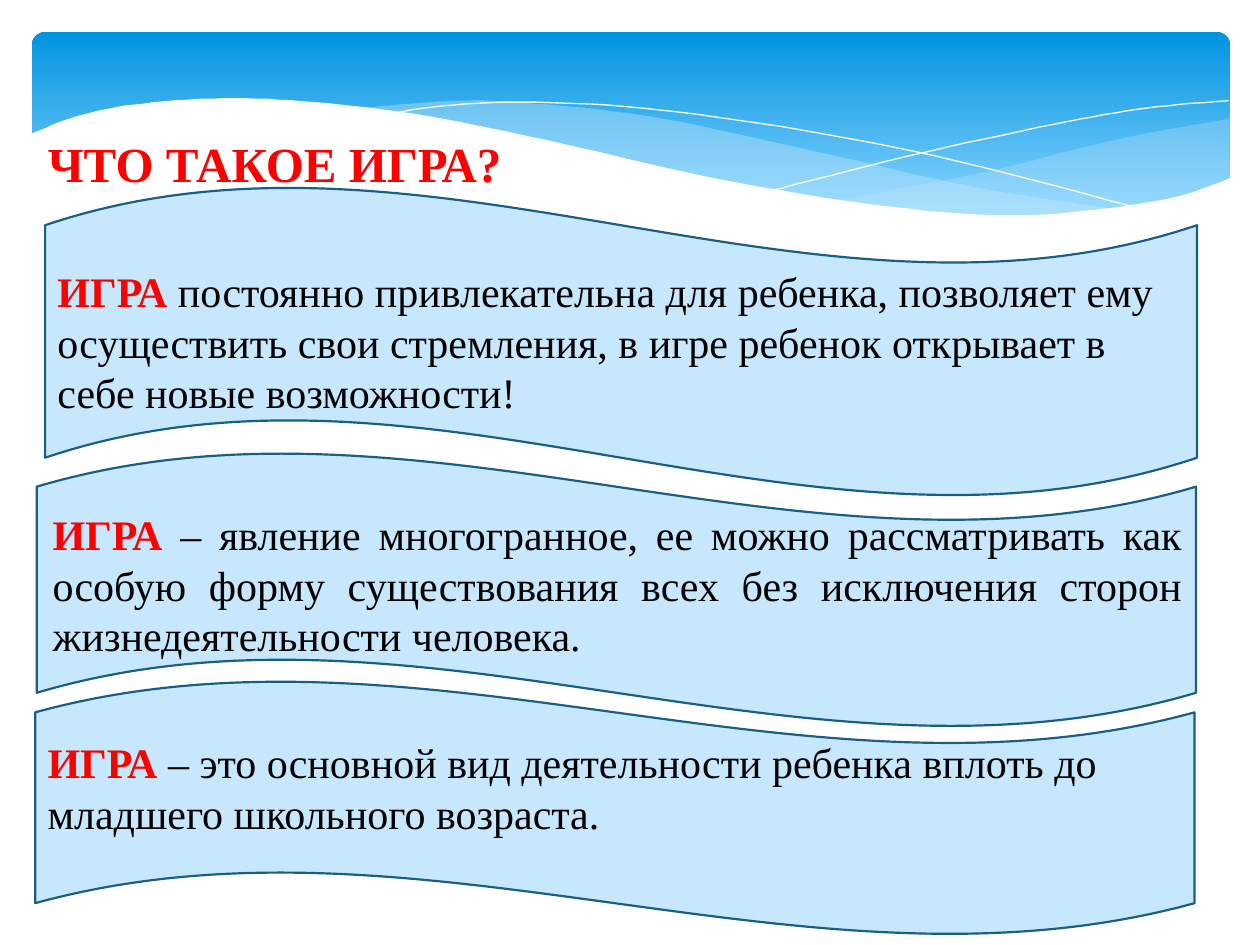
from lxml import etree
from pptx import Presentation, util as u
from pptx.dml.color import RGBColor
from pptx.enum import shapes, text
from pptx.oxml.ns import qn

FONT = "Times New Roman"
RED, BLACK, WHITE = "FF0000", "000000", "FFFFFF"
PALE_BLUE, DARK_BLUE = "C6E7FC", "195F84"
UNITS = 100  # freeform units in a centimetre

# Curves of the header, as the points they pass through, in centimetres
RIGHT_VEIL = [
    [(24.79, 2.39), (22.63, 2.79), (19.79, 3.48), (16.79, 4.06)],
    [(16.79, 4.06), (18.59, 4.27), (20.4, 4.37), (22.15, 4.29),
     (23.57, 4.01), (24.79, 3.58)],
]
LEFT_VEIL = [
    [(22.68, 4.24), (19.69, 3.78), (15.98, 2.95), (13.06, 2.34),
     (10.67, 2.08), (9.17, 2.03), (7.26, 2.18)],
    [(7.26, 2.18), (9.19, 2.46), (11.4, 2.95), (14.38, 3.63),
     (17.27, 4.14), (19.33, 4.34), (21.03, 4.39), (22.68, 4.24)],
]
LONG_LINE = [[(7.85, 2.29), (8.97, 2.13), (10.57, 2.06), (12.95, 2.18),
              (16.15, 2.62), (19.3, 3.25), (23.04, 4.22)]]
SHORT_LINE = [[(15.57, 3.84), (18.29, 3.15), (21.23, 2.51),
               (23.11, 2.18), (24.77, 2.03)]]
WHITE_EDGE = [
    [(24.82, 3.58), (23.37, 4.04), (20.55, 4.34), (17.48, 4.11),
     (14.1, 3.53), (11.35, 2.9), (8.64, 2.34), (6.35, 2.06),
     (4.5, 1.98), (2.69, 2.11), (1.5, 2.36), (0.58, 2.72)],
    [(0.58, 5.69), (24.82, 5.69)],
]

# Wave place, text place, alignment and wording, from bottom to top
STATEMENTS = [
    ((0.71, 13.72, 23.37, 5.13), (0.71, 14.73, 23.83, 2.31), text.PP_ALIGN.LEFT,
     " – это основной вид деятельности ребенка вплоть до младшего "
     "школьного возраста."),
    ((0.74, 9.12, 23.37, 5.54), (0.81, 10.13, 23.27, 3.33), text.PP_ALIGN.JUSTIFY,
     " – явление многогранное, ее можно рассматривать как особую форму "
     "существования всех без исключения сторон жизнедеятельности человека."),
    ((0.91, 3.76, 23.22, 6.25), (0.91, 5.23, 23.16, 3.33), text.PP_ALIGN.LEFT,
     " постоянно привлекательна для ребенка, позволяет ему осуществить "
     "свои стремления, в игре ребенок открывает в себе новые возможности!"),
]


def color(value):
    return RGBColor.from_string(value)


def place(values):
    return [u.Cm(value) for value in values]


def paint(shape, fill=None, line=None, width=0):
    """Set a plain fill and outline; None leaves either one out."""
    shape.shadow.inherit = False
    if fill:
        shape.fill.solid()
        shape.fill.fore_color.rgb = color(fill)
    else:
        shape.fill.background()
    if line:
        shape.line.color.rgb = color(line)
        shape.line.width = u.Pt(width)
    else:
        shape.line.fill.background()


def set_opacity(shape, percent):
    solid = shape.fill.fore_color._xFill[0]
    etree.SubElement(solid, qn("a:alpha")).set("val", str(percent * 1000))


def smooth(points, steps=8):
    """Sample a Catmull-Rom curve that passes through the points."""
    if len(points) < 3:
        return points
    padded = [points[0], *points, points[-1]]
    curve = []
    for a, b, c, d in zip(padded, padded[1:], padded[2:], padded[3:]):
        for step in range(steps):
            t = step / steps
            curve.append(tuple(
                (2 * q + (r - p) * t + (2 * p - 5 * q + 4 * r - s) * t ** 2
                 + (3 * q - p - 3 * r + s) * t ** 3) / 2
                for p, q, r, s in zip(a, b, c, d)))
    return curve + [points[-1]]


def add_curve(page, parts, close=True):
    points = [(x * UNITS, y * UNITS) for part in parts for x, y in smooth(part)]
    builder = page.shapes.build_freeform(*points[0], scale=u.Cm(1) / UNITS)
    builder.add_line_segments(points[1:], close=close)
    return builder.convert_to_shape()


def add_header(page):
    # Blue gradient band
    band = page.shapes.add_shape(shapes.MSO_SHAPE.ROUNDED_RECTANGLE,
                                 *place((0.64, 0.64, 24.16, 3.96)))
    band.adjustments[0] = 0.07
    paint(band)
    band.fill.gradient()
    band.fill.gradient_angle = 270
    stops = band.fill.gradient_stops
    for stop, position, value in zip(stops, (0, 0.9), ("0293E0", "83D3FE")):
        stop.position = position
        stop.color.rgb = color(value)

    # Translucent veils
    for parts, opacity in ((RIGHT_VEIL, 29), (LEFT_VEIL, 40)):
        veil = add_curve(page, parts)
        paint(veil, fill=PALE_BLUE)
        set_opacity(veil, opacity)

    # Hairlines, then the white lower edge
    for parts in (LONG_LINE, SHORT_LINE):
        paint(add_curve(page, parts, close=False), line=WHITE)
    paint(add_curve(page, WHITE_EDGE), fill=WHITE)


def add_wave(page, at):
    wave = page.shapes.add_shape(shapes.MSO_SHAPE.WAVE, *place(at))
    paint(wave, PALE_BLUE, DARK_BLUE, 1.25)


def add_statement(page, at, alignment, wording):
    box = page.shapes.add_textbox(*place(at))
    box.text_frame.word_wrap = True
    box.text_frame.auto_size = text.MSO_AUTO_SIZE.SHAPE_TO_FIT_TEXT
    para = box.text_frame.paragraphs[0]
    para.alignment = alignment
    para.font.name = FONT
    para.font.size = u.Pt(24)
    for words, value, bold in (("ИГРА", RED, True), (wording, BLACK, False)):
        span = para.add_run()
        span.text = words
        span.font.bold = bold
        span.font.color.rgb = color(value)


def set_title(page, wording):
    title = page.shapes.title
    title.left, title.top, title.width, title.height = place((0.71, 2.57, 9.88, 1.45))
    frame = title.text_frame
    frame.text = wording
    frame.word_wrap = True
    frame.auto_size = text.MSO_AUTO_SIZE.SHAPE_TO_FIT_TEXT
    frame.vertical_anchor = text.MSO_ANCHOR.TOP
    para = frame.paragraphs[0]
    para.alignment = text.PP_ALIGN.JUSTIFY
    para.font.name = FONT
    para.font.size = u.Pt(28)
    para.font.bold = True
    para.font.color.rgb = color(RED)
    # Bring the title in front of the header
    page.shapes._spTree.append(title._element)


def main():
    deck = Presentation()
    deck.slide_width, deck.slide_height = place((25.4, 19.05))
    page = deck.slides.add_slide(deck.slide_layouts[5])
    add_header(page)
    for wave_at, text_at, alignment, wording in STATEMENTS:
        add_wave(page, wave_at)
        add_statement(page, text_at, alignment, wording)
    set_title(page, "ЧТО ТАКОЕ ИГРА?")
    deck.save("out.pptx")


if __name__ == "__main__":
    main()
